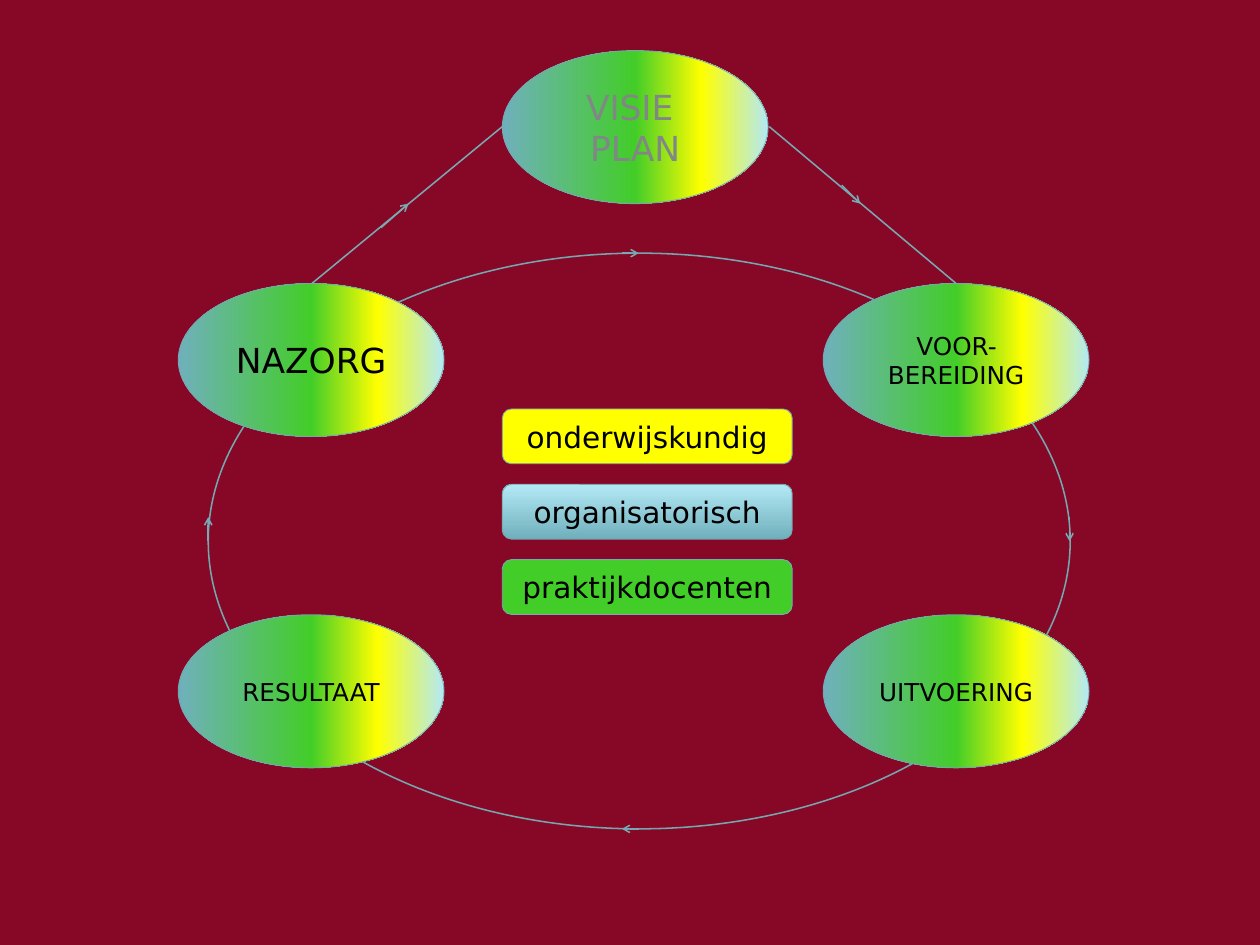
from lxml import etree
from pptx import Presentation
from pptx import util as u
from pptx.dml.color import RGBColor
from pptx.enum import shapes, text
from pptx.oxml import ns

theme = {
    "font": "DejaVu Sans",
    "background": "870726",
    "ink": "000000",
    "muted": "808785",
    "edge": "74A7B0",
    "arrow": "78AAB3",
    "yellow": "FFFF00",
    "green": "43CD29",
    "stage_stops": [(0, "6FB0BC"), (50, "43CD29"), (75, "FFFF00"), (100, "B3E9F5")],
    "bar_stops": [(0, "6FB0BC"), (100, "B3E9F5")],
    "large": 28,
    "medium": 24,
    "small": 20,
    "thin": 0.75,
    "thick": 1.25,
}


def paint(fill, colour, angle=0):
    if isinstance(colour, str):
        fill.solid()
        fill.fore_color.rgb = RGBColor.from_string(colour)
        return
    fill.gradient()
    fill.gradient_angle = angle
    stops = fill._xPr.find(ns.qn("a:gradFill")).find(ns.qn("a:gsLst"))
    for stop in list(stops):
        stops.remove(stop)
    for position, value in colour:
        stop = etree.SubElement(stops, ns.qn("a:gs"), pos=str(position * 1000))
        etree.SubElement(stop, ns.qn("a:srgbClr"), val=value)


def add_label(kind, bounds, lines, size, ink, colour, edge, angle=0):
    box = page.shapes.add_shape(kind, *map(u.Cm, bounds))
    box.shadow.inherit = False
    paint(box.fill, colour, angle)
    paint(box.line.fill, edge)
    box.line.width = u.Pt(theme["thin"])
    frame = box.text_frame
    frame_format = {
        "word_wrap": True,
        "vertical_anchor": text.MSO_ANCHOR.MIDDLE,
        "margin_left": u.Cm(0.36),
        "margin_right": u.Cm(0.36),
        "margin_top": u.Cm(0.18),
        "margin_bottom": u.Cm(0.18),
    }
    for name, value in frame_format.items():
        setattr(frame, name, value)
    for index, line in enumerate(lines):
        para = frame.add_paragraph() if index else frame.paragraphs[0]
        para.alignment = text.PP_ALIGN.CENTER
        span = para.add_run()
        span.text = line
        for name, value in {"name": theme["font"], "size": u.Pt(size)}.items():
            setattr(span.font, name, value)
        span.font.color.rgb = RGBColor.from_string(ink)


deck = Presentation()
deck.slide_width, deck.slide_height = u.Cm(36.12), u.Cm(27.1)
page = deck.slides.add_slide(deck.slide_layouts[6])
paint(page.background.fill, theme["background"])

ring = page.shapes.add_shape(
    shapes.MSO_SHAPE.OVAL, u.Cm(5.97), u.Cm(7.26), u.Cm(24.71), u.Cm(16.51)
)
ring.shadow.inherit = False
ring.fill.background()
paint(ring.line.fill, theme["edge"])
ring.line.width = u.Pt(theme["thick"])

west, east, upper, lower = 5.11, 23.6, 8.13, 17.63
stages = [
    (east, upper, ["VOOR-BEREIDING"], theme["small"], theme["ink"]),
    (east, lower, ["UITVOERING"], theme["small"], theme["ink"]),
    (west, lower, ["RESULTAAT"], theme["small"], theme["ink"]),
    (west, upper, ["NAZORG"], theme["large"], theme["ink"]),
    (14.4, 1.45, ["VISIE ", "PLAN"], theme["large"], theme["muted"]),
]
for left, top, lines, size, ink in stages:
    add_label(shapes.MSO_SHAPE.OVAL, (left, top, 7.62, 4.39), lines, size, ink,
              theme["stage_stops"], theme["edge"])

links = [
    (17.83, 7.26, 18.31, 7.26, True),
    (30.66, 14.83, 30.66, 15.52, True),
    (18.31, 23.77, 17.83, 23.77, True),
    (5.97, 15.52, 5.97, 14.83, True),
    (8.94, 8.13, 14.4, 3.63, False),
    (22.05, 3.63, 27.41, 8.13, False),
    (10.92, 6.53, 11.71, 5.84, True),
    (24.13, 5.31, 24.66, 5.84, True),
]
for *ends, pointed in links:
    link = page.shapes.add_connector(shapes.MSO_CONNECTOR.STRAIGHT, *map(u.Cm, ends))
    paint(link.line.fill, theme["arrow"])
    link.line.width = u.Pt(theme["thick"])
    properties = link.element.spPr
    if pointed:
        etree.SubElement(properties.find(ns.qn("a:ln")), ns.qn("a:tailEnd"), type="arrow")
    etree.SubElement(properties, ns.qn("a:effectLst"))

bars = [
    ("onderwijskundig", theme["yellow"], theme["arrow"]),
    ("organisatorisch", theme["bar_stops"], theme["edge"]),
    ("praktijkdocenten", theme["green"], theme["arrow"]),
]
for row, (label, colour, edge) in enumerate(bars):
    add_label(shapes.MSO_SHAPE.ROUNDED_RECTANGLE, (14.4, 11.73 + row * 2.16, 8.31, 1.57),
              [label], theme["medium"], theme["ink"], colour, edge, angle=90)

deck.save("out.pptx")
